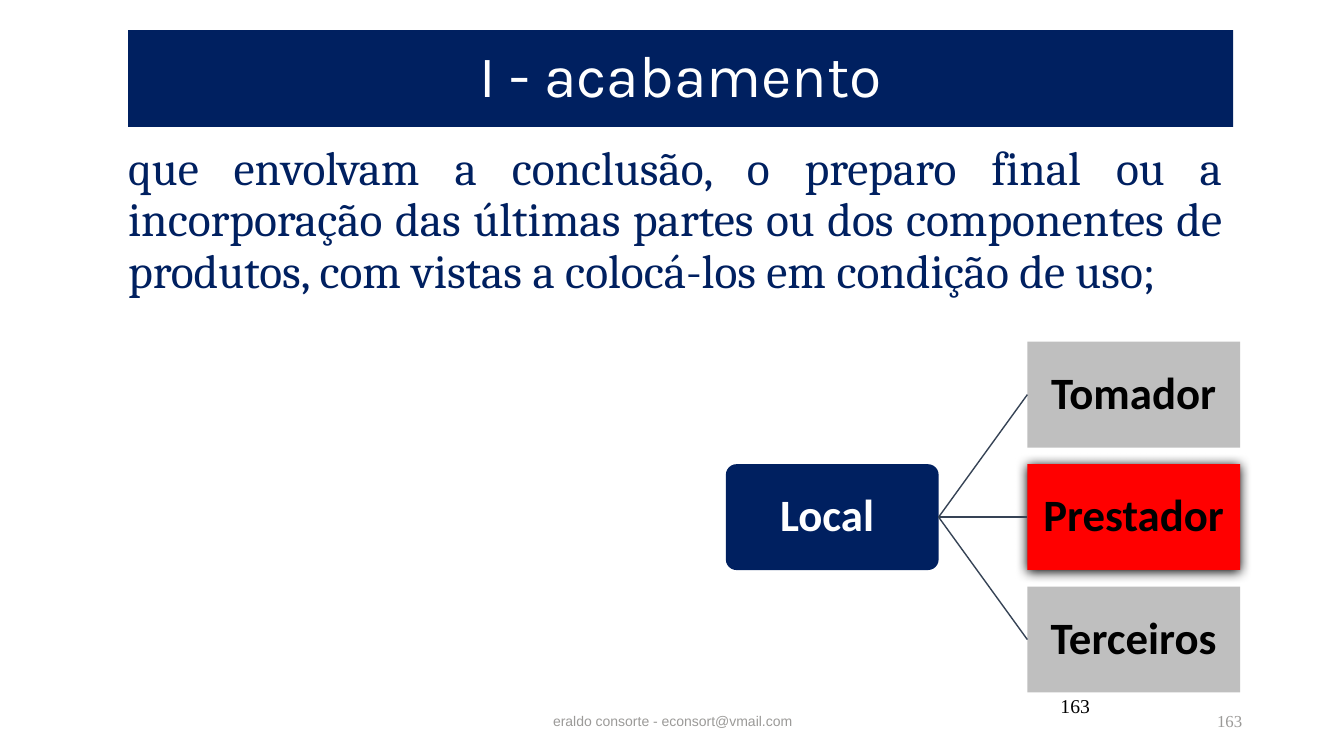
from lxml.etree import SubElement
from pptx import Presentation
from pptx.dml.color import RGBColor
from pptx.enum.shapes import MSO_CONNECTOR as Link, MSO_SHAPE as Preset
from pptx.enum.text import MSO_ANCHOR as Anchor, MSO_AUTO_SIZE as AutoSize, PP_ALIGN as Align
from pptx.oxml.ns import qn
from pptx.util import Inches, Pt

COLORS = {
    "navy": "002060", "white": "FFFFFF", "black": "000000", "muted": "9B9A98",
    "silver": "BFBFBF", "red": "FF0000", "slate": "364355",
}


def color(name):
    return RGBColor.from_string(COLORS[name])


def write(frame, text, *, font, size, ink, align=Align.CENTER, anchor=Anchor.MIDDLE,
          bold=False, spacing=None, before=0, inset=None):
    frame.word_wrap = True
    frame.auto_size = AutoSize.NONE
    frame.vertical_anchor = anchor
    if inset is not None:
        frame.margin_left = frame.margin_right = Inches(inset)
        frame.margin_top = frame.margin_bottom = Inches(inset)
    paragraph = frame.paragraphs[0]
    paragraph.alignment = align
    paragraph.line_spacing = spacing
    paragraph.space_before = Pt(before)
    run = paragraph.add_run()
    run.text = text
    run.font.name = font
    run.font.size = Pt(size)
    run.font.bold = bold
    run.font.color.rgb = color(ink)
    return paragraph


class SlideBuilder:
    node_size = (15.83, 14)
    node_style = dict(font="Calibri", size=32, bold=True, spacing=0.9, inset=0.02)

    def __init__(self, deck):
        self.deck = deck
        self.slide = deck.slides.add_slide(deck.slide_layouts[1])

    def area(self, left, top, width, height):
        across, down = self.deck.slide_width / 100, self.deck.slide_height / 100
        return [int(left * across), int(top * down), int(width * across), int(height * down)]

    def place(self, item, *share):
        item.left, item.top, item.width, item.height = self.area(*share)

    def title(self, text, *share):
        heading = self.slide.shapes.title
        self.place(heading, *share)
        heading.fill.solid()
        heading.fill.fore_color.rgb = color("navy")
        write(heading.text_frame, text, font="Karla", size=42, ink="white", spacing=0.9)

    def body(self, text, *share):
        definition = self.slide.placeholders[1]
        self.place(definition, *share)
        paragraph = write(definition.text_frame, text, font="Cambria", size=34, ink="navy",
                          align=Align.JUSTIFY, anchor=Anchor.TOP, spacing=0.9, before=10)
        properties = paragraph._p.get_or_add_pPr()
        properties.set("marL", "0")
        properties.set("indent", "0")
        SubElement(properties, qn("a:buNone"))

    def label(self, text, *share, **style):
        box = self.slide.shapes.add_textbox(*self.area(*share))
        write(box.text_frame, text, **style)

    def node(self, text, left, top, fill, ink, preset=Preset.RECTANGLE):
        node = self.slide.shapes.add_shape(preset, *self.area(left, top, *self.node_size))
        node.shadow.inherit = False
        node.fill.solid()
        node.fill.fore_color.rgb = color(fill)
        node.line.fill.background()
        write(node.text_frame, text, ink=ink, **self.node_style)
        return node

    def glow(self, node):
        effects = node._element.spPr.find(qn("a:effectLst"))
        shadow = SubElement(effects, qn("a:outerShdw"), blurRad=str(Pt(8.5)),
                            dist=str(Pt(1)), dir="5400000", algn="ctr", rotWithShape="0")
        SubElement(shadow, qn("a:srgbClr"), val=COLORS["black"])

    def branch(self, parent, child):
        line = self.slide.shapes.add_connector(Link.STRAIGHT, 0, 0, 0, 0)
        line.begin_connect(parent, 3)
        line.end_connect(child, 1)
        line.line.color.rgb = color("slate")
        line.line.width = Pt(1)
        SubElement(line._element.spPr, qn("a:effectLst"))


def main():
    deck = Presentation()
    deck.slide_width, deck.slide_height = Inches(13.33), Inches(7.5)
    page = SlideBuilder(deck)

    page.title("I - acabamento", 9.53, 4, 82.22, 12.8)
    page.body("que envolvam a conclusão, o preparo final ou a incorporação das últimas partes "
              "ou dos componentes de produtos, com vistas a colocá-los em condição de uso;",
              8.78, 18.4, 82.97, 72.8)

    page.label("eraldo consorte - econsort@vmail.com", 33.16, 92.67, 33.76, 5.33,
               font="Arial", size=10, ink="muted")
    page.label("163", 70.67, 92.67, 22.5, 5.33,
               font="Times New Roman", size=12, ink="muted", align=Align.RIGHT)
    page.label("163", 66.24, 91.07, 15.6, 6.67, font="Times New Roman", size=14,
               ink="black", align=Align.RIGHT, anchor=Anchor.TOP)

    first_top, step = 45.2, 16.2
    place = page.node("Local ", 54.01, first_top + step, "navy", "white",
                      Preset.ROUNDED_RECTANGLE)
    place.adjustments[0] = 0.1
    parties = [("Tomador", "silver"), ("Prestador", "red"), ("Terceiros", "silver")]
    for row, (party, fill) in enumerate(parties):
        option = page.node(party, 76.44, first_top + row * step, fill, "black")
        if fill == "red":
            page.glow(option)
        page.branch(place, option)

    deck.save("out.pptx")


if __name__ == "__main__":
    main()
